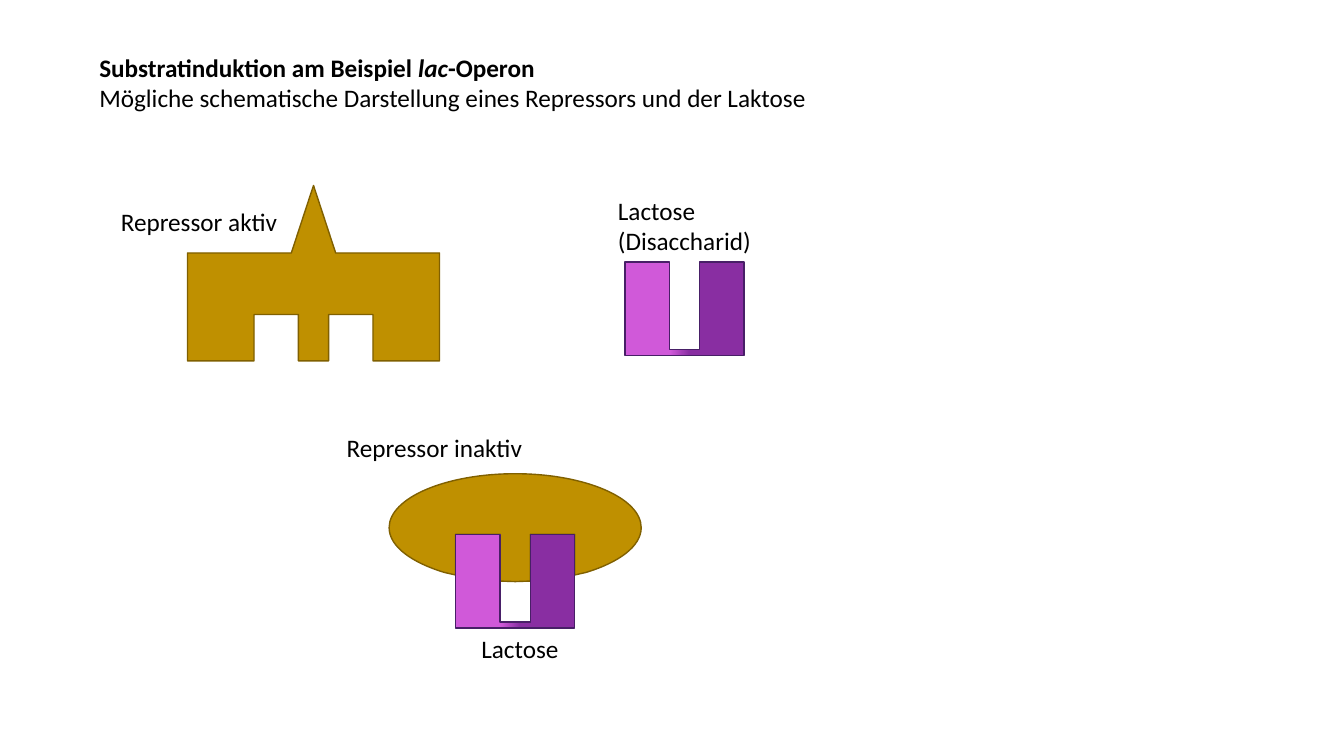
from lxml.etree import SubElement
from pptx import Presentation
from pptx.dml.color import RGBColor
from pptx.enum.text import MSO_ANCHOR, MSO_AUTO_SIZE, PP_ALIGN
from pptx.oxml.ns import qn
from pptx.util import Inches, Pt

COLORS = {
    "text": "000000",
    "repressor": "BF9000",
    "repressor_line": "806000",
    "galactose": "D059D9",
    "glucose": "892EA2",
    "lactose_line": "481F67",
}
CELL = Inches(0.1)
SITE_INNER, SITE_OUTER = 1.5, 5.9
ACTIVE_HALF = [(0, 0), (2.2, 6.7), (12.5, 6.7), (12.5, 17.4), (SITE_OUTER, 17.4),
               (SITE_OUTER, 12.8), (SITE_INNER, 12.8), (SITE_INNER, 17.4)]
INACTIVE_HALF = [(0, 0), (6.9, 0), (12.5, 2.4), (12.5, 5.35), (12.5, 7.2), (10.3, 8.8), (7, 9.8),
                 (SITE_OUTER, 10.05), (SITE_OUTER, 6), (SITE_INNER, 6), (SITE_INNER, 10.65), (0, 10.7)]
LACTOSE_HALF = [(SITE_INNER, 8.7), (SITE_INNER, 0), (SITE_OUTER, 0), (SITE_OUTER, 9.3)]


def color(name):
    return RGBColor.from_string(COLORS[name])


def cells(*lengths):
    return [int(length * CELL) for length in lengths]


class SlideBuilder:
    font_name = "Calibri"
    font_size = Pt(18)
    line_width = Pt(1)

    def __init__(self, presentation):
        self.slide = presentation.slides.add_slide(presentation.slide_layouts[5])
        self.shapes = self.slide.shapes

    def start_group(self):
        self.shapes = self.slide.shapes.add_group_shape().shapes

    def style_text(self, shape, paragraphs):
        frame = shape.text_frame
        frame.word_wrap = True
        frame.auto_size = MSO_AUTO_SIZE.SHAPE_TO_FIT_TEXT
        frame.vertical_anchor = MSO_ANCHOR.TOP
        for index, runs in enumerate(paragraphs):
            paragraph = frame.paragraphs[0] if index == 0 else frame.add_paragraph()
            paragraph.alignment = PP_ALIGN.LEFT
            paragraph.font.name = self.font_name
            paragraph.font.size = self.font_size
            paragraph.font.color.rgb = color("text")
            for text, bold, italic in runs:
                run = paragraph.add_run()
                run.text = text
                run.font.bold = bold
                run.font.italic = italic

    def title(self, column, row, columns, rows, paragraphs):
        title = self.slide.shapes.title
        title.left, title.top, title.width, title.height = cells(column, row, columns, rows)
        self.style_text(title, paragraphs)

    def label(self, column, row, columns, rows, text):
        box = self.shapes.add_textbox(*cells(column, row, columns, rows))
        self.style_text(box, [[(text, False, False)]])

    def symmetric_shape(self, center, row, half, line):
        outline = list(half)
        for x, y in reversed(half):
            if (-x, y) != outline[-1]:
                outline.append((-x, y))
        points = [tuple(cells(center + x, row + y)) for x, y in outline]
        builder = self.shapes.build_freeform(*points[0])
        builder.add_line_segments(points[1:], close=True)
        shape = builder.convert_to_shape()
        shape.shadow.inherit = False
        shape.line.color.rgb = color(line)
        shape.line.width = self.line_width
        return shape

    def curve_segments(self, shape, starts):
        segments = list(shape.element.iter(qn("a:lnTo")))
        for start in starts:
            first, *others = segments[start:start + 3]
            outline = first.getparent()
            curve = SubElement(outline, qn("a:cubicBezTo"))
            outline.replace(first, curve)
            curve.append(first[0])
            for segment in others:
                curve.append(segment[0])
                outline.remove(segment)

    def repressor(self, center, row, half, curve_starts=()):
        shape = self.symmetric_shape(center, row, half, "repressor_line")
        self.curve_segments(shape, curve_starts)
        shape.fill.solid()
        shape.fill.fore_color.rgb = color("repressor")

    def lactose(self, center, row):
        shape = self.symmetric_shape(center, row, LACTOSE_HALF, "lactose_line")
        shape.fill.gradient()
        shape.fill.gradient_angle = 180
        stops = zip(shape.fill.gradient_stops, (0.46, 0.62), ("glucose", "galactose"))
        for stop, position, name in stops:
            stop.position = position
            stop.color.rgb = color(name)


def main():
    presentation = Presentation()
    presentation.slide_width = Inches(13.33)
    presentation.slide_height = Inches(7.5)
    builder = SlideBuilder(presentation)

    builder.title(8.85, 4.7, 106.7, 7.1, [
        [("Substratinduktion am Beispiel ", True, False), ("lac", True, True), ("-Operon", True, False)],
        [("Mögliche schematische Darstellung eines Repressors und der Laktose", False, False)],
    ])

    builder.start_group()
    builder.repressor(31.1, 18.4, ACTIVE_HALF)
    builder.label(11, 20, 27.3, 4, "Repressor aktiv")

    builder.start_group()
    builder.lactose(67.9, 26)
    builder.label(60.3, 18.9, 15.2, 7.1, "Lactose (Disaccharid)")

    builder.start_group()
    builder.repressor(51.1, 47, INACTIVE_HALF, curve_starts=(0, 3, 16, 19))
    builder.lactose(51.1, 53)
    builder.label(33.4, 42.4, 27.3, 4, "Repressor inaktiv")
    builder.label(46.75, 62.3, 13.5, 4, "Lactose")

    presentation.save("out.pptx")


if __name__ == "__main__":
    main()
